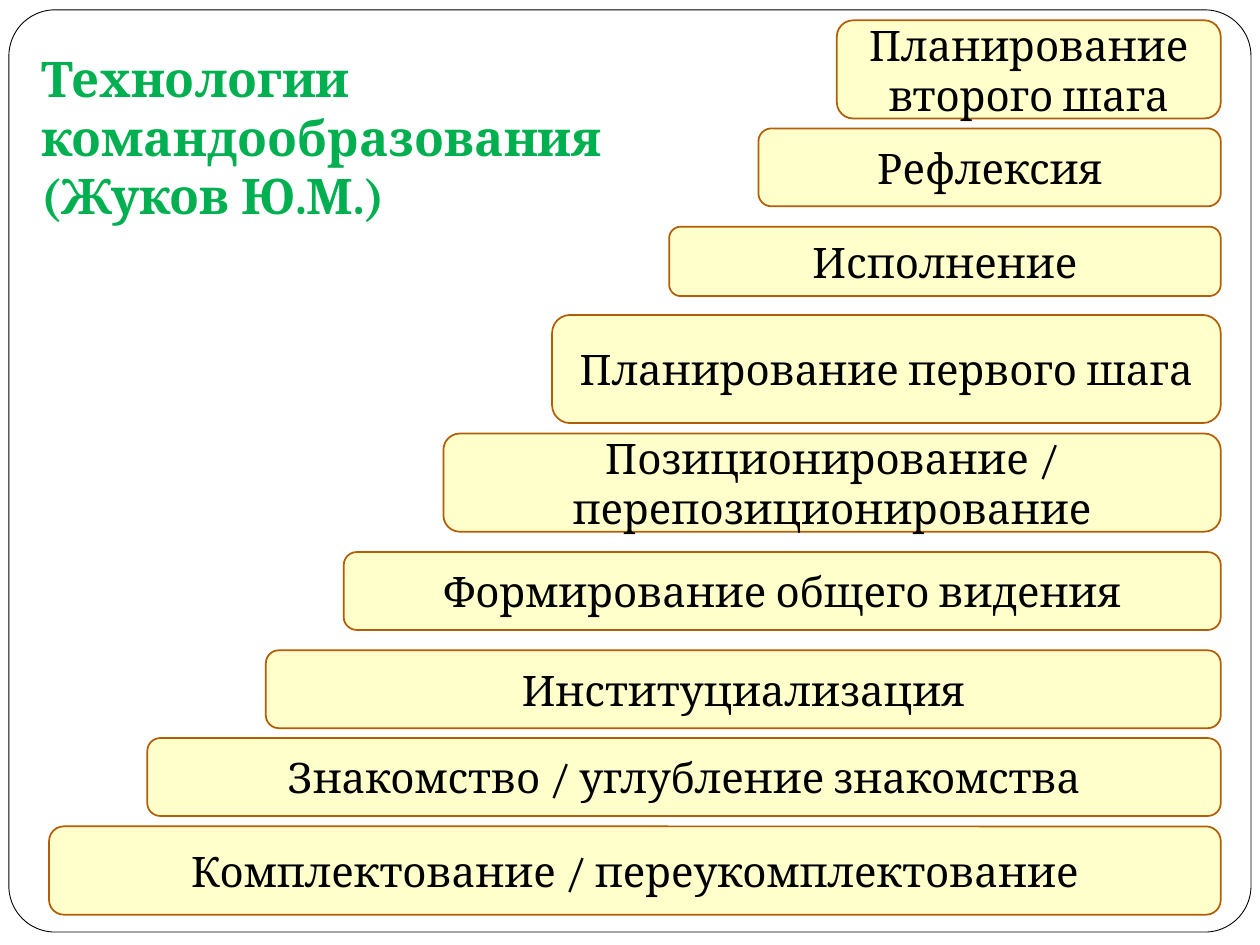
import pptx
import pptx.dml.color
import pptx.enum.shapes
import pptx.enum.text
import pptx.util

Cm, Pt = pptx.util.Cm, pptx.util.Pt

FONT = "Cambria"
COLORS = {
    "paper": "FFFFFF",
    "frame": "000000",
    "title": "00B050",
    "step": "FFFFCC",
    "step_line": "B25E07",
    "step_text": "000000",
}
TITLE_LINES = ["Технологии командообразования", "(Жуков Ю.М.)"]

# All steps share one right edge; each is (text, left, top, height) in cm
STEPS_RIGHT = 24.61
STEPS = [
    ("Комплектование / переукомплектование", 0.99, 16.66, 1.78),
    ("Знакомство / углубление знакомства", 2.97, 14.88, 1.57),
    ("Институциализация", 5.36, 13.11, 1.57),
    ("Формирование общего видения", 6.93, 11.13, 1.57),
    ("Позиционирование / перепозиционирование", 8.94, 8.74, 1.98),
    ("Планирование первого шага", 11.13, 6.35, 2.18),
    ("Исполнение", 13.49, 4.57, 1.4),
    ("Рефлексия", 15.29, 2.59, 1.57),
    ("Планирование второго шага", 16.87, 0.41, 1.98),
]


def rgb(name):
    return pptx.dml.color.RGBColor.from_string(COLORS[name])


def add_run(paragraph, text, size, color, bold=False):
    run = paragraph.add_run()
    run.text = text
    run.font.name = FONT
    run.font.size = Pt(size)
    run.font.bold = bold
    run.font.color.rgb = rgb(color)


def add_rounded_box(slide, left, top, width, height, fill, line, line_width):
    box = slide.shapes.add_shape(
        pptx.enum.shapes.MSO_SHAPE.ROUNDED_RECTANGLE,
        Cm(left), Cm(top), Cm(width), Cm(height))
    box.shadow.inherit = False
    box.fill.solid()
    box.fill.fore_color.rgb = rgb(fill)
    box.line.color.rgb = rgb(line)
    box.line.width = Pt(line_width)
    return box


def add_title(slide):
    title = slide.shapes.add_textbox(Cm(0.58), Cm(0.79), Cm(12.01), Cm(3.99))
    frame = title.text_frame
    frame.word_wrap = True
    frame.vertical_anchor = pptx.enum.text.MSO_ANCHOR.BOTTOM
    frame.margin_bottom = Cm(0.25)
    paragraph = frame.paragraphs[0]
    for index, line in enumerate(TITLE_LINES):
        if index:
            paragraph.add_line_break()
        add_run(paragraph, line, 28, "title", bold=True)


def add_step(slide, text, left, top, height):
    step = add_rounded_box(slide, left, top, STEPS_RIGHT - left, height,
                           "step", "step_line", 1)
    frame = step.text_frame
    frame.word_wrap = True
    frame.vertical_anchor = pptx.enum.text.MSO_ANCHOR.MIDDLE
    paragraph = frame.paragraphs[0]
    paragraph.alignment = pptx.enum.text.PP_ALIGN.CENTER
    add_run(paragraph, text, 24, "step_text")


def main():
    deck = pptx.Presentation()
    deck.slide_width, deck.slide_height = Cm(25.4), Cm(19.05)
    slide = deck.slides.add_slide(deck.slide_layouts[6])

    # Page frame
    page = add_rounded_box(slide, 0.18, 0.2, 25.04, 18.59,
                           "paper", "frame", 0.5)
    page.adjustments[0] = 0.05

    # Title
    add_title(slide)

    # Staircase of team-building steps, from the bottom up
    for step in STEPS:
        add_step(slide, *step)

    deck.save("out.pptx")


if __name__ == "__main__":
    main()
